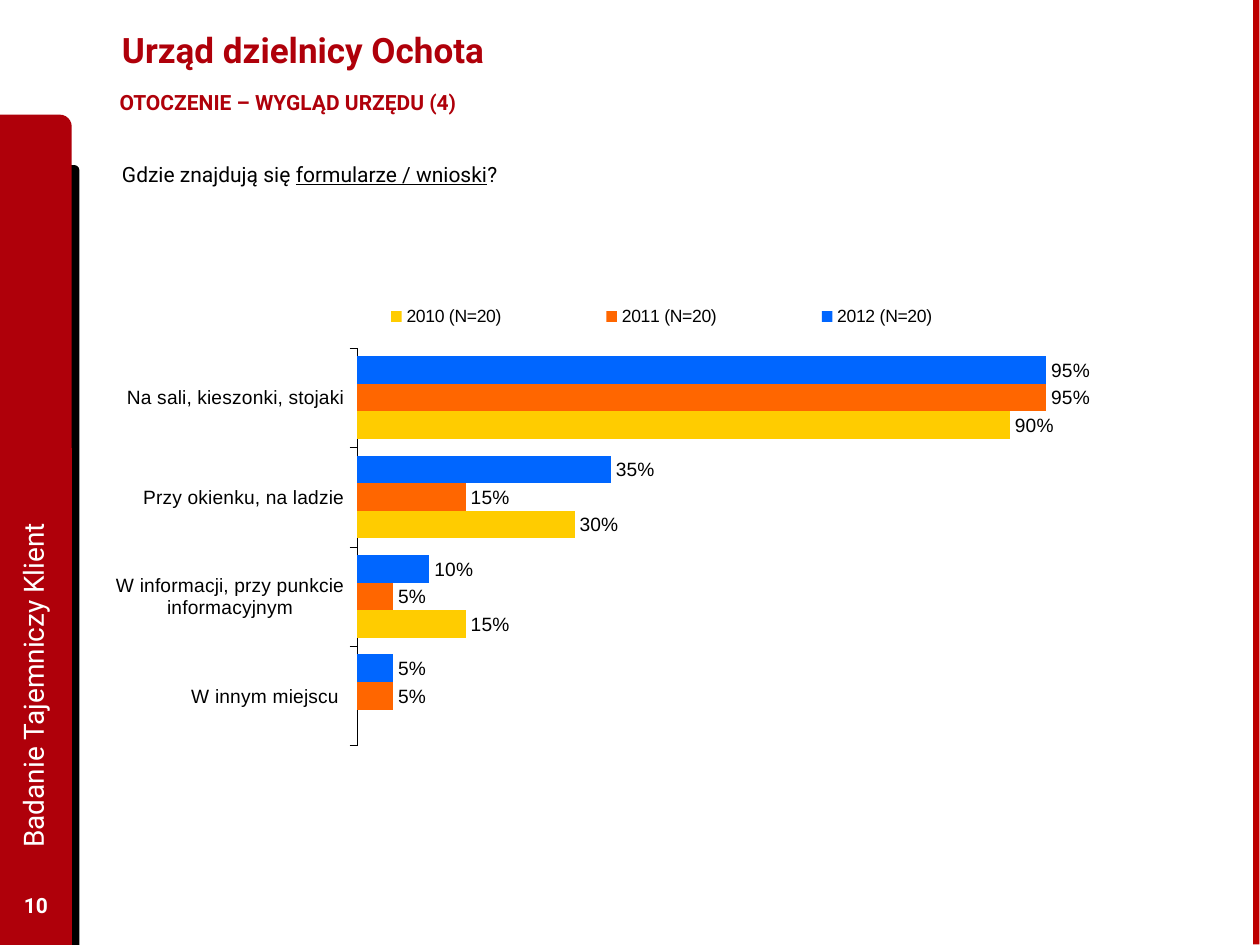
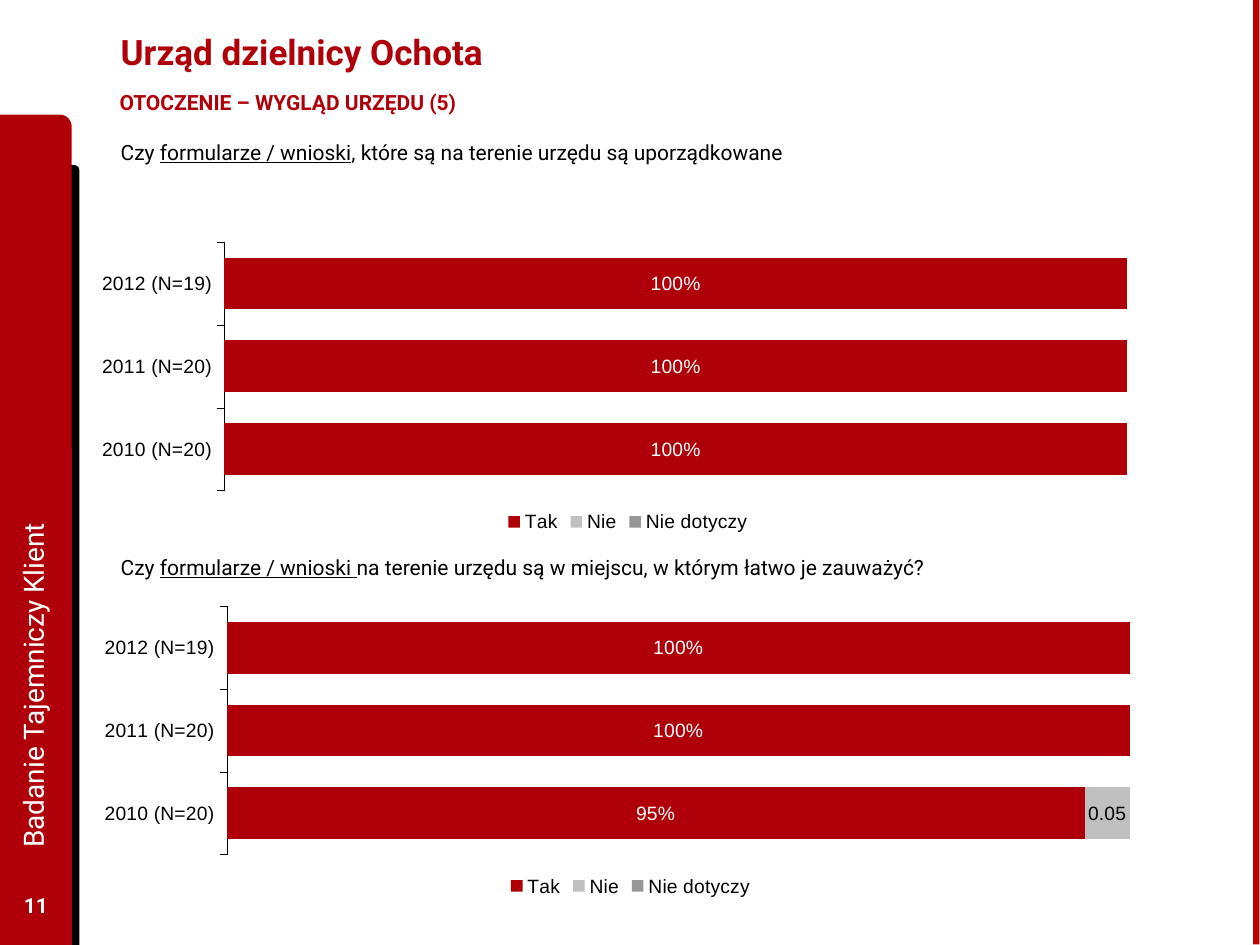
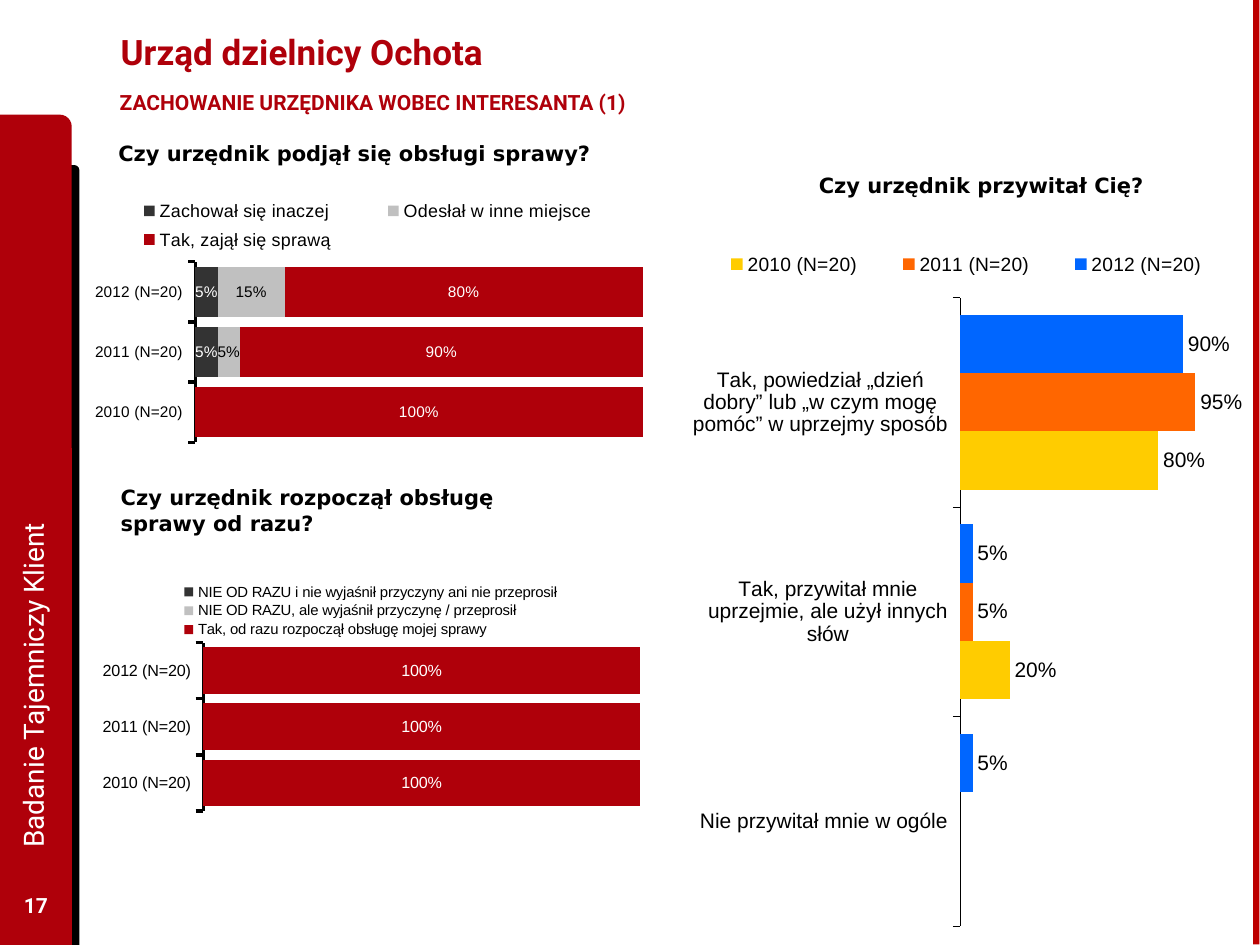
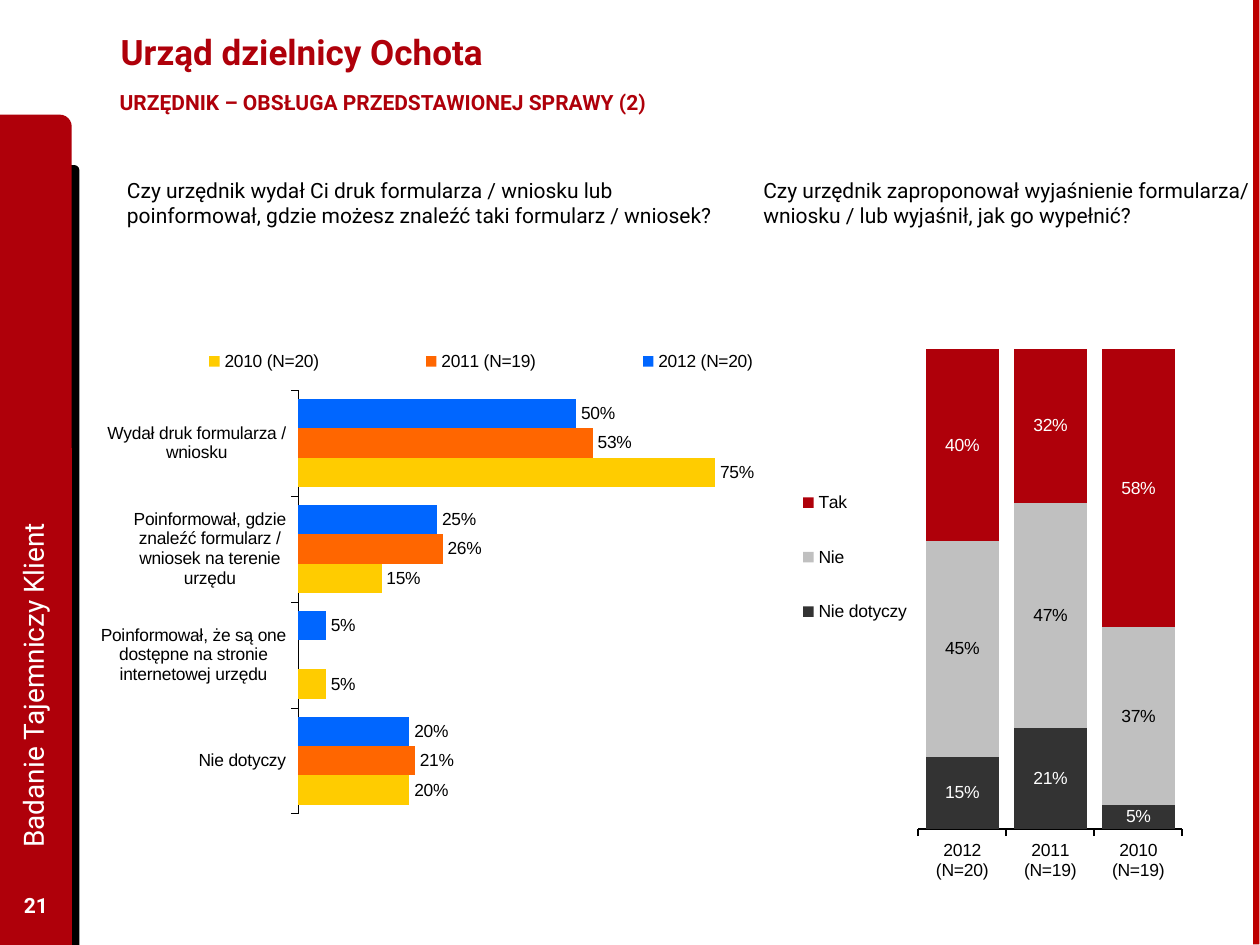
from dataclasses import dataclass

from lxml import etree
from pptx import Presentation
from pptx import util as u
from pptx.chart.data import CategoryChartData
from pptx.dml.color import RGBColor
from pptx.enum import chart as c, shapes, text
from pptx.oxml.ns import qn

# Slide grid: 100 columns by 75 rows
COLUMNS, ROWS = 100, 75
WIDTH, HEIGHT = u.Inches(10), u.Inches(7.5)

RED, STRIP_RED = "AF000A", "BD0000"
BLACK, WHITE = "000000", "FFFFFF"
DARK, GREY, MID_GREY = "333333", "C0C0C0", "969696"
BLUE, ORANGE, YELLOW = "0066FF", "FF6600", "FFCC00"

Box = tuple[float, float, float, float]


@dataclass(frozen=True)
class Band:
    kind: shapes.MSO_SHAPE
    box: Box
    fill: str
    rotation: int = 0


@dataclass(frozen=True)
class Question:
    words: str  # underlined parts stand between underscores
    box: Box
    font: str = "Roboto"
    bold: bool = False


@dataclass(frozen=True)
class Series:
    name: str
    values: tuple
    fill: str
    label_format: str = "0%"


@dataclass(frozen=True)
class ChartPart:
    kind: c.XL_CHART_TYPE
    box: Box
    categories: tuple
    series: tuple
    plot: Box
    size: float
    legend_at: c.XL_LEGEND_POSITION
    legend_size: float
    legend: Box | None = None
    gap: int = 60
    axis_width: float = 0.25
    reverse: bool = True
    fixed_scale: bool = True


@dataclass(frozen=True)
class Page:
    number: int
    subtitle: str
    questions: tuple
    charts: tuple
    title_box: Box = (8.6, 0.5, 77.7, 7.2)


BANDS = (
    Band(shapes.MSO_SHAPE.ROUND_1_RECTANGLE, (3.9, 13.1, 2.4, 61.9), BLACK),
    Band(shapes.MSO_SHAPE.ROUND_1_RECTANGLE, (0, 9.1, 5.7, 65.9), RED),
    Band(shapes.MSO_SHAPE.RECTANGLE, (62.2, 37.2, 75, 0.5), STRIP_RED, 90),
)


# Helpers
def place(box: Box) -> list[int]:
    """Turn grid columns and rows into slide lengths."""
    left, top, width, height = box
    return [round(left * WIDTH / COLUMNS), round(top * HEIGHT / ROWS),
            round(width * WIDTH / COLUMNS), round(height * HEIGHT / ROWS)]


def colour(value: str) -> RGBColor:
    return RGBColor.from_string(value)


def paint(target, value: str) -> None:
    target.fill.solid()
    target.fill.fore_color.rgb = colour(value)


def style(font, size: float, value: str = BLACK, name: str = "Arial", bold: bool = False) -> None:
    font.size, font.name, font.bold = u.Pt(size), name, bold
    font.color.rgb = colour(value)


def add_text(slide, words: str, box: Box, *, size: float = 12, value: str = BLACK,
             font: str = "Roboto", bold: bool = False, middle: bool = False,
             centred: bool = False, wrap: bool = True, grow: bool = False,
             side_inset: float = 0.1, rotation: int = 0) -> None:
    shape = slide.shapes.add_textbox(*place(box))
    shape.rotation = rotation
    frame = shape.text_frame
    frame.word_wrap = wrap
    frame.margin_left = frame.margin_right = u.Inches(side_inset)
    frame.auto_size = text.MSO_AUTO_SIZE.SHAPE_TO_FIT_TEXT if grow else text.MSO_AUTO_SIZE.NONE
    frame.vertical_anchor = text.MSO_ANCHOR.MIDDLE if middle else text.MSO_ANCHOR.TOP
    paragraph = frame.paragraphs[0]
    paragraph.alignment = text.PP_ALIGN.CENTER if centred else text.PP_ALIGN.LEFT
    for index, part in enumerate(words.split("_")):
        run = paragraph.add_run()
        run.text = part
        style(run.font, size, value, font, bold)
        if index % 2:
            run.font.underline = True


def add_band(slide, band: Band) -> None:
    shape = slide.shapes.add_shape(band.kind, *place(band.box))
    shape.shadow.inherit = False
    shape.rotation = band.rotation
    paint(shape, band.fill)
    shape.line.fill.background()


def make_layout(shares: Box, inner: bool = False):
    layout = etree.Element(qn("c:layout"))
    manual = etree.SubElement(layout, qn("c:manualLayout"))
    settings = [("layoutTarget", "inner")] if inner else []
    settings += [("xMode", "edge"), ("yMode", "edge"), *zip("xywh", shares)]
    for tag, value in settings:
        etree.SubElement(manual, qn(f"c:{tag}")).set("val", str(value))
    return layout


def drop_layout(element) -> None:
    for layout in element.findall(qn("c:layout")):
        element.remove(layout)


def add_chart(slide, part: ChartPart) -> None:
    data = CategoryChartData(number_format="0%")
    data.categories = part.categories
    for series in part.series:
        data.add_series(series.name, series.values, series.label_format)
    chart = slide.shapes.add_chart(part.kind, *place(part.box), data).chart
    clustered = part.kind == c.XL_CHART_TYPE.BAR_CLUSTERED
    chart.has_title = False
    style(chart.font, part.size)

    # Plot and series
    plot = chart.plots[0]
    plot.vary_by_categories = False
    plot.gap_width = part.gap
    plot.overlap = 0 if clustered else 100
    for series, drawn in zip(part.series, plot.series):
        paint(drawn.format, series.fill)
        labels = drawn.data_labels
        labels.show_value = True
        labels.number_format = series.label_format
        labels.number_format_is_linked = False
        position = c.XL_LABEL_POSITION
        labels.position = position.OUTSIDE_END if clustered else position.CENTER
        style(labels.font, part.size, WHITE if series.fill in (RED, DARK) else BLACK)
    area = chart._chartSpace.chart.plotArea
    drop_layout(area)
    area.insert(0, make_layout(part.plot, inner=True))

    # Axes
    axis = chart.category_axis
    axis.reverse_order = part.reverse
    axis.major_tick_mark = c.XL_TICK_MARK.OUTSIDE
    axis.has_major_gridlines = False
    axis.format.line.color.rgb = colour(BLACK)
    axis.format.line.width = u.Pt(part.axis_width)
    style(axis.tick_labels.font, part.size)
    scale = chart.value_axis
    scale.has_major_gridlines = False
    scale.visible = False
    if part.fixed_scale:
        scale.minimum_scale, scale.maximum_scale, scale.major_unit = 0, 1, 0.2

    # Legend
    chart.has_legend = True
    legend = chart.legend
    legend.position = part.legend_at
    legend.include_in_layout = False
    style(legend.font, part.legend_size)
    if part.legend:
        drop_layout(legend._element)
        legend._element.find(qn("c:legendPos")).addnext(make_layout(part.legend))


# Chart families
def year_series(sizes: tuple, *values: tuple) -> tuple:
    return tuple(Series(f"{year} (N={size})", row, fill) for year, size, row, fill
                 in zip((2012, 2011, 2010), sizes, values, (BLUE, ORANGE, YELLOW)))


def yes_no_chart(box: Box, yes: tuple, no: tuple) -> ChartPart:
    return ChartPart(
        c.XL_CHART_TYPE.BAR_STACKED, box, ("2012 (N=19)", "2011 (N=20)", "2010 (N=20)"),
        (Series("Tak", yes, RED), Series("Nie", no, GREY, "General"),
         Series("Nie dotyczy", NONE, MID_GREY, "General")),
        (0.12, 0, 0.85, 0.84), 11, c.XL_LEGEND_POSITION.BOTTOM, 11)


def share_chart(box: Box, names: tuple, values: tuple, plot: Box, size: float,
                legend_size: float, legend: Box,
                kind=c.XL_CHART_TYPE.BAR_STACKED_100,
                categories: tuple = ("2010 (N=20)", "2011 (N=20)", "2012 (N=20)"),
                legend_at=c.XL_LEGEND_POSITION.TOP, axis_width: float = 1.85) -> ChartPart:
    series = tuple(map(Series, names, values, (DARK, GREY, RED)))
    return ChartPart(kind, box, categories, series, plot, size, legend_at, legend_size, legend,
                     gap=20, axis_width=axis_width, reverse=False, fixed_scale=False)


# Content
NONE = (None, None, None)
ALL = (1, 1, 1)
BARS = c.XL_CHART_TYPE.BAR_CLUSTERED
TOP, RIGHT = c.XL_LEGEND_POSITION.TOP, c.XL_LEGEND_POSITION.RIGHT

PAGES = (
    Page(10, "OTOCZENIE – WYGLĄD URZĘDU (4)",
         (Question("Gdzie znajdują się _formularze / wnioski_?", (8.7, 12.3, 39.4, 3)),),
         (ChartPart(
             BARS, (9.2, 23.7, 90.7, 35.5),
             ("Na sali, kieszonki, stojaki", "Przy okienku, na ladzie",
              "W informacji, przy punkcie informacyjnym", "W innym miejscu "),
             year_series((20, 20, 20), (0.95, 0.35, 0.1, 0.05), (0.95, 0.15, 0.05, 0.05),
                         (0.9, 0.3, 0.15, None)),
             (0.207, 0.113, 0.638, 0.89), 11, TOP, 10.1, (0.15, 0, 0.65, 0.08)),),
         title_box=(8.7, 0.3, 77.7, 7.2)),
    Page(11, "OTOCZENIE – WYGLĄD URZĘDU (5)",
         (Question("Czy _formularze / wnioski _na terenie urzędu są w miejscu, "
                   "w którym łatwo je zauważyć?", (8.6, 43.5, 78.7, 3)),
          Question("Czy _formularze / wnioski_, które są na terenie urzędu są uporządkowane",
                   (8.6, 10.6, 58.3, 3))),
         (yes_no_chart((7.7, 19.2, 84.3, 23.5), ALL, NONE),
          yes_no_chart((7.9, 48.1, 84.3, 23.5), (1, 1, 0.95), (None, None, 0.05)))),
    Page(17, "ZACHOWANIE URZĘDNIKA WOBEC INTERESANTA (1)",
         tuple(Question(words, box, "DejaVu Sans", True) for words, box in (
             ("Czy urzędnik rozpoczął obsługę sprawy od razu?", (8.6, 38, 38.9, 5)),
             ("Czy urzędnik podjął się obsługi sprawy?", (8.4, 10.7, 39.8, 3)),
             ("Czy urzędnik przywitał Cię?", (64, 13.2, 28.6, 3)))),
         (ChartPart(
             BARS, (54.9, 17.9, 43.7, 55.6),
             ("Tak, powiedział „dzień dobry” lub „w czym mogę pomóc” w uprzejmy sposób",
              "Tak, przywitał mnie uprzejmie, ale użył innych słów",
              "Nie przywitał mnie w ogóle"),
             year_series((20, 20, 20), (0.9, 0.05, 0.05), (0.95, 0.05, None), (0.8, 0.2, None)),
             (0.489, 0.103, 0.451, 0.897), 12, RIGHT, 11, (0, 0.03, 1, 0.05)),
          share_chart(
              (8.1, 46.1, 42.7, 18.4),
              ("NIE OD RAZU i nie wyjaśnił przyczyny ani nie przeprosił",
               "NIE OD RAZU, ale wyjaśnił przyczynę / przeprosił",
               "Tak, od razu rozpoczął obsługę mojej sprawy"),
              (NONE, NONE, ALL), (0.188, 0.269, 0.812, 0.731), 9.2, 8.5,
              (0.12, 0, 0.76, 0.26)),
          share_chart(
              (7.4, 15.3, 43.6, 20.6),
              ("Zachował się inaczej", "Odesłał w inne miejsce", "Tak, zajął się sprawą"),
              ((None, 0.05, 0.05), (None, 0.05, 0.15), (1, 0.9, 0.8)),
              (0.186, 0.266, 0.814, 0.696), 8.8, 10.2, (0, 0, 1, 0.25)))),
    Page(21, "URZĘDNIK – OBSŁUGA PRZEDSTAWIONEJ SPRAWY (2)",
         (Question("Czy urzędnik zaproponował wyjaśnienie formularza/ wniosku / "
                   "lub wyjaśnił, jak go wypełnić?", (59.6, 13.6, 41.6, 5)),
          Question("Czy urzędnik wydał Ci druk formularza / wniosku lub poinformował, "
                   "gdzie możesz znaleźć taki formularz / wniosek?", (9.1, 13.6, 49.3, 5))),
         (share_chart(
             (61.9, 24.9, 32.2, 47.7), ("Nie dotyczy", "Nie", "Tak"),
             ((0.15, 0.21, 0.05), (0.45, 0.47, 0.37), (0.4, 0.32, 0.58)),
             (0.341, 0.059, 0.651, 0.798), 10, 10, (0.03, 0.24, 0.31, 0.33),
             c.XL_CHART_TYPE.COLUMN_STACKED_100,
             ("2012 (N=20)", "2011 (N=19)", "2010 (N=19)"),
             c.XL_LEGEND_POSITION.LEFT, 1.17),
          ChartPart(
              BARS, (8, 26.8, 59.8, 37.8),
              ("Wydał druk formularza / wniosku",
               "Poinformował, gdzie znaleźć formularz / wniosek na terenie urzędu",
               "Poinformował, że są one dostępne na stronie internetowej urzędu",
               "Nie dotyczy"),
              year_series((20, 19, 20), (0.5, 0.25, 0.05, 0.2), (0.53, 0.26, None, 0.21),
                          (0.75, 0.15, 0.05, 0.2)),
              (0.255, 0.11, 0.745, 0.89), 10, RIGHT, 10, (0, 0.01, 1, 0.08)))),
)


def build_page(presentation, page: Page) -> None:
    slide = presentation.slides.add_slide(presentation.slide_layouts[6])
    for band in BANDS:
        add_band(slide, band)
    add_text(slide, "Urząd dzielnicy Ochota", page.title_box,
             size=20, value=RED, bold=True, middle=True)
    add_text(slide, page.subtitle, (7.5, 6.6, 38.5, 3.3),
             value=RED, bold=True, wrap=False, side_inset=0.2)
    for question in page.questions:
        add_text(slide, question.words, question.box,
                 font=question.font, bold=question.bold, grow=True)
    for part in page.charts:
        add_chart(slide, part)
    # Page number and study name on the red band
    add_text(slide, str(page.number), (0, 69.8, 5.7, 4),
             value=WHITE, bold=True, middle=True, centred=True)
    add_text(slide, "Badanie Tajemniczy Klient", (-26.2, 36.9, 57.6, 5.1),
             size=16, value=WHITE, middle=True, rotation=270)


def main() -> None:
    presentation = Presentation()
    presentation.slide_width, presentation.slide_height = WIDTH, HEIGHT
    for page in PAGES:
        build_page(presentation, page)
    presentation.save("out.pptx")


if __name__ == "__main__":
    main()
